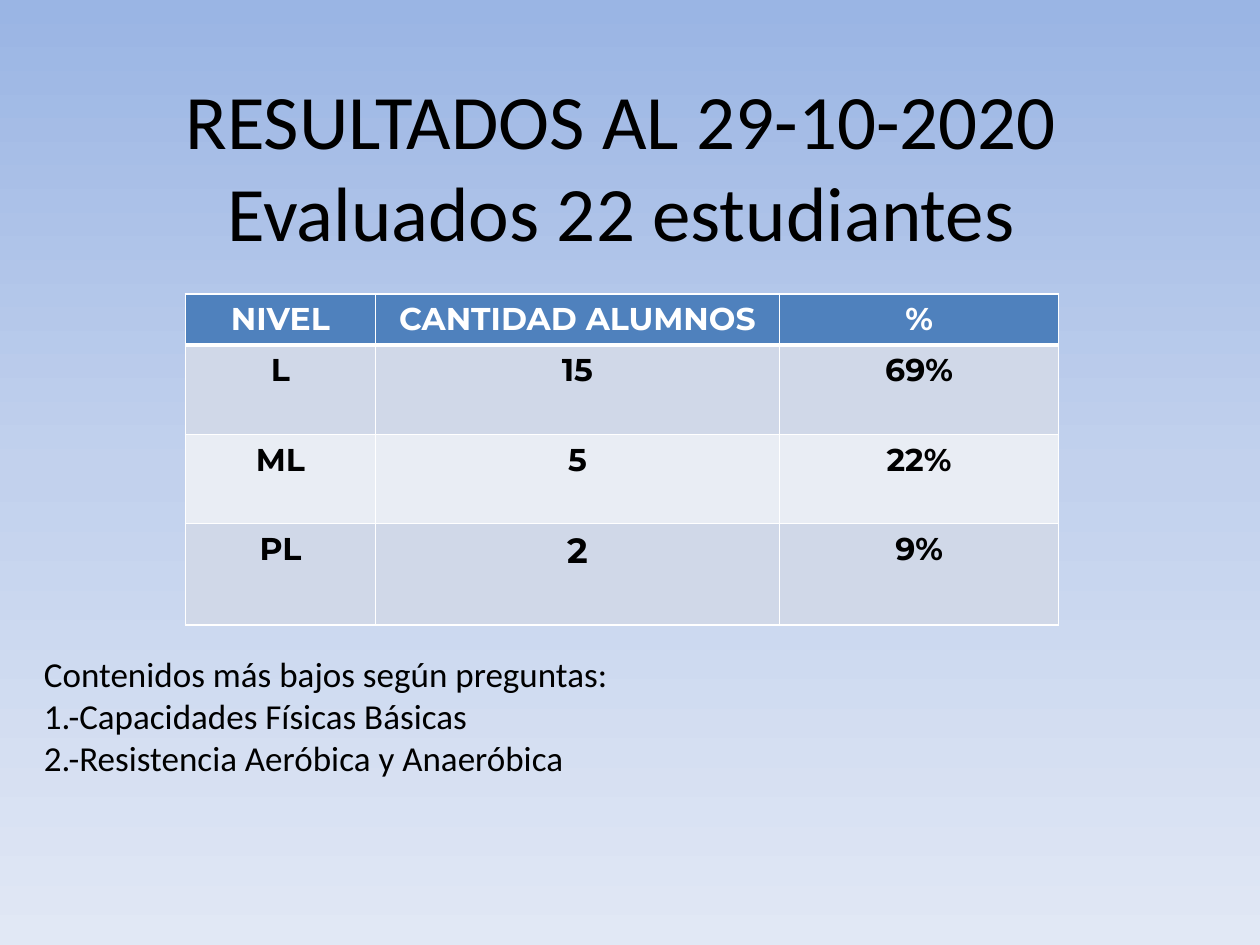
from copy import deepcopy

from lxml import etree
from pptx import Presentation
from pptx.dml.color import RGBColor
from pptx.enum.text import MSO_ANCHOR, MSO_AUTO_SIZE, PP_ALIGN
from pptx.oxml.ns import qn
from pptx.util import Pt

CENTER = PP_ALIGN.CENTER
LEFT = PP_ALIGN.LEFT
MIDDLE = MSO_ANCHOR.MIDDLE
NO_FIT = MSO_AUTO_SIZE.NONE
TITLE_ONLY = 5


def color(value):
    return RGBColor.from_string(value)


class ResultsSlide:
    """Holds the style and the current slide, and draws each kind of element."""

    body_font = "Calibri"
    table_font = "Montserrat"
    ink = "000000"
    white = "FFFFFF"
    header_fill = "4F81BD"
    band_fills = ("D0D8E8", "E9EDF4")

    def __init__(self, deck):
        self.page = deck.slides.add_slide(deck.slide_layouts[TITLE_ONLY])

    def background(self, stops):
        fill = self.page.background.fill
        fill.gradient()
        fill.gradient_angle = 270
        stop_list = self.page.element.find(".//" + qn("a:gsLst"))
        for _ in range(len(stops) - len(stop_list)):
            stop_list.append(deepcopy(stop_list[0]))
        for stop, (position, value) in zip(fill.gradient_stops, stops):
            stop.position = position
            stop.color.rgb = color(value)

    def span(self, para, text, size, font, ink, bold=False):
        span = para.add_run()
        span.text = text
        span.font.size = Pt(size)
        span.font.name = font
        span.font.bold = bold
        span.font.color.rgb = color(ink)

    def place(self, box, left, top, width, height):
        box.left, box.top = Pt(left), Pt(top)
        box.width, box.height = Pt(width), Pt(height)

    def title(self, lines, area, size):
        box = self.page.shapes.title
        self.place(box, *area)
        frame = box.text_frame
        frame.auto_size = NO_FIT
        frame.vertical_anchor = MIDDLE
        para = frame.paragraphs[0]
        para.alignment = CENTER
        for index, line in enumerate(lines):
            if index:
                para.add_line_break()
            self.span(para, line, size, self.body_font, self.ink)

    def text(self, lines, area, size):
        box = self.page.shapes.add_textbox(*map(Pt, area))
        frame = box.text_frame
        frame.word_wrap = True
        for index, line in enumerate(lines):
            para = frame.add_paragraph() if index else frame.paragraphs[0]
            para.alignment = LEFT
            self.span(para, line, size, self.body_font, self.ink)

    def borders(self, cell, bottom):
        properties = cell._tc.get_or_add_tcPr()
        widths = {"a:lnL": 1, "a:lnR": 1, "a:lnT": 1, "a:lnB": bottom}
        for index, (tag, width) in enumerate(widths.items()):
            line = etree.Element(qn(tag), w=str(Pt(width)))
            solid = etree.SubElement(line, qn("a:solidFill"))
            etree.SubElement(solid, qn("a:srgbClr"), val=self.white)
            properties.insert(index, line)

    def cell(self, cell, text, size, fill, ink, bottom):
        cell.fill.solid()
        cell.fill.fore_color.rgb = color(fill)
        para = cell.text_frame.paragraphs[0]
        para.alignment = CENTER
        self.span(para, text, size, self.table_font, ink, bold=True)
        self.borders(cell, bottom)

    def table(self, rows, left, top, widths, heights, size, larger):
        area = map(Pt, (left, top, sum(widths), sum(heights)))
        table = self.page.shapes.add_table(len(rows), len(widths), *area).table
        for column, width in zip(table.columns, widths):
            column.width = Pt(width)
        for row, height in zip(table.rows, heights):
            row.height = Pt(height)
        for r, values in enumerate(rows):
            fill = self.band_fills[(r - 1) % 2] if r else self.header_fill
            ink = self.ink if r else self.white
            bottom = 1 if r else 3
            for c, value in enumerate(values):
                cell_size = larger.get((r, c), size)
                self.cell(table.cell(r, c), value, cell_size, fill, ink, bottom)


def main():
    deck = Presentation()
    deck.slide_width, deck.slide_height = Pt(720), Pt(540)
    slide = ResultsSlide(deck)
    slide.background([(0, "9AB5E4"), (0.5, "C2D1ED"), (1, "E1E8F5")])
    slide.title(
        ["RESULTADOS AL 29-10-2020", "Evaluados 22 estudiantes"],
        (31, 32, 648, 124.5),
        size=44,
    )
    slide.table(
        [
            ("NIVEL", "CANTIDAD ALUMNOS", "%"),
            ("L", "15", "69%"),
            ("ML", "5", "22%"),
            ("PL", "2", "9%"),
        ],
        left=106,
        top=168,
        widths=(108.5, 231, 159.5),
        heights=(29, 51, 51, 58),
        size=18,
        larger={(3, 1): 20},
    )
    slide.text(
        [
            "Contenidos más bajos según preguntas:",
            "1.-Capacidades Físicas Básicas",
            "2.-Resistencia Aeróbica y Anaeróbica",
        ],
        (18, 369.5, 675, 80),
        size=20,
    )
    deck.save("out.pptx")


if __name__ == "__main__":
    main()
